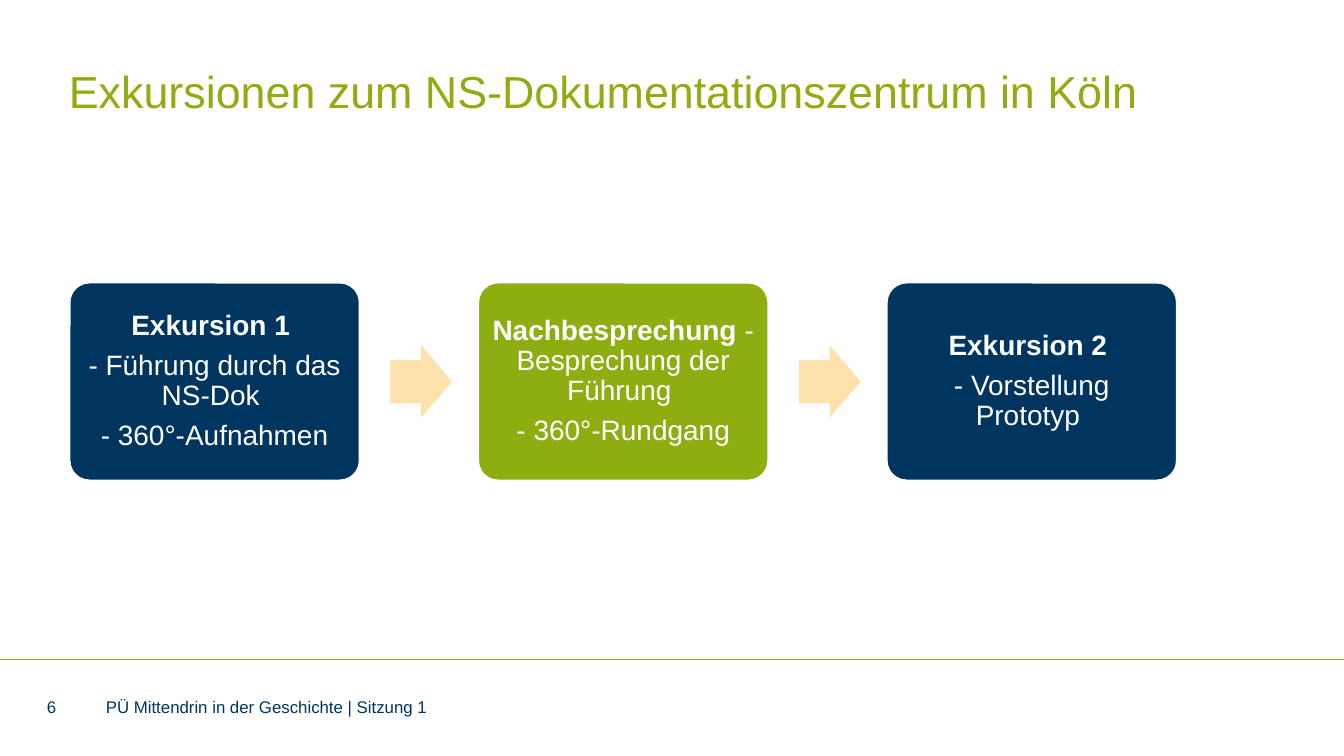
from pptx import Presentation
from pptx.dml.color import RGBColor
from pptx.enum.shapes import MSO_CONNECTOR, MSO_SHAPE
from pptx.enum.text import MSO_ANCHOR, PP_ALIGN
from pptx.util import Pt
from lxml.etree import SubElement
from pptx.oxml.ns import qn

NAVY, GREEN, SAND, WHITE = "003560", "8DAE10", "FFE2AB", "FFFFFF"
LEFT, TOP, WIDTH, HEIGHT = 37.3, 151.4, 155.4, 106
PITCH = 218.9

# Each step: fill, then paragraphs made of (text, bold) runs
STEPS = [
    (NAVY, [[("Exkursion 1 ", True)],
            [("- Führung durch das NS-Dok ", False)],
            [("- 360°-Aufnahmen", False)]]),
    (GREEN, [[("Nachbesprechung ", True), ("- Besprechung der Führung ", False)],
             [("- 360°-Rundgang", False)]]),
    (NAVY, [[("Exkursion 2 ", True)],
            [("- Vorstellung Prototyp ", False)]]),
]


def color(code):
    return RGBColor.from_string(code)


def style(font, size, code, bold=False):
    font.name = "Arial"
    font.size = Pt(size)
    font.bold = bold
    font.color.rgb = color(code)


def inset(frame, gap, anchor):
    frame.word_wrap = True
    frame.vertical_anchor = anchor
    frame.margin_left = frame.margin_right = Pt(gap)
    frame.margin_top = frame.margin_bottom = Pt(gap)


def add_title(slide, text):
    title = slide.shapes.title
    title.left, title.top, title.width, title.height = Pt(36.9), Pt(31), Pt(595.4), Pt(36.7)
    frame = title.text_frame
    frame.text = text
    inset(frame, 0, MSO_ANCHOR.TOP)
    line = frame.paragraphs[0]
    line.alignment = PP_ALIGN.LEFT
    line.line_spacing = 1.1
    style(line.runs[0].font, 24, GREEN)


def add_form(slide, kind, left, top, width, height, fill):
    form = slide.shapes.add_shape(kind, Pt(left), Pt(top), Pt(width), Pt(height))
    form.shadow.inherit = False
    form.fill.solid()
    form.fill.fore_color.rgb = color(fill)
    return form


def add_step(slide, left, fill, paras):
    box = add_form(slide, MSO_SHAPE.ROUNDED_RECTANGLE, left, TOP, WIDTH, HEIGHT, fill)
    box.adjustments[0] = 0.1
    box.line.color.rgb = color(WHITE)
    box.line.width = Pt(1)
    frame = box.text_frame
    inset(frame, 4.2, MSO_ANCHOR.MIDDLE)
    for i, parts in enumerate(paras):
        para = frame.add_paragraph() if i else frame.paragraphs[0]
        para.alignment = PP_ALIGN.CENTER
        para.line_spacing = 0.9
        para.space_after = Pt(5.25)
        for text, bold in parts:
            run = para.add_run()
            run.text = text
            style(run.font, 15, WHITE, bold)


def add_arrow(slide, left):
    width, height = 33, 38.6
    arrow = add_form(slide, MSO_SHAPE.RIGHT_ARROW, left, TOP + (HEIGHT - height) / 2,
                     width, height, SAND)
    arrow.adjustments[0] = 0.6
    arrow.adjustments[1] = 0.5
    arrow.line.fill.background()


def add_rule(slide, top, width):
    rule = slide.shapes.add_connector(MSO_CONNECTOR.STRAIGHT, 0, Pt(top), Pt(width), Pt(top))
    rule.line.color.rgb = color(GREEN)
    rule.line.width = Pt(0.5)
    SubElement(rule._element.spPr, qn("a:effectLst"))


def add_note(slide, left, width, text):
    box = slide.shapes.add_textbox(Pt(left), Pt(374.4), Pt(width), Pt(8.8))
    frame = box.text_frame
    frame.text = text
    inset(frame, 0, MSO_ANCHOR.MIDDLE)
    style(frame.paragraphs[0].runs[0].font, 9, NAVY)


def main():
    deck = Presentation()
    deck.slide_width, deck.slide_height = Pt(720), Pt(405)
    slide = deck.slides.add_slide(deck.slide_layouts[5])
    add_rule(slide, 353.4, 720)
    add_title(slide, "Exkursionen zum NS-Dokumentationszentrum in Köln")
    for i, (fill, paras) in enumerate(STEPS):
        left = LEFT + i * PITCH
        add_step(slide, left, fill, paras)
        if i < len(STEPS) - 1:
            add_arrow(slide, left + WIDTH + 16.5)
    add_note(slide, 25.2, 20, "6")
    add_note(slide, 56.7, 433.4, "PÜ Mittendrin in der Geschichte | Sitzung 1")
    deck.save("out.pptx")


if __name__ == "__main__":
    main()
